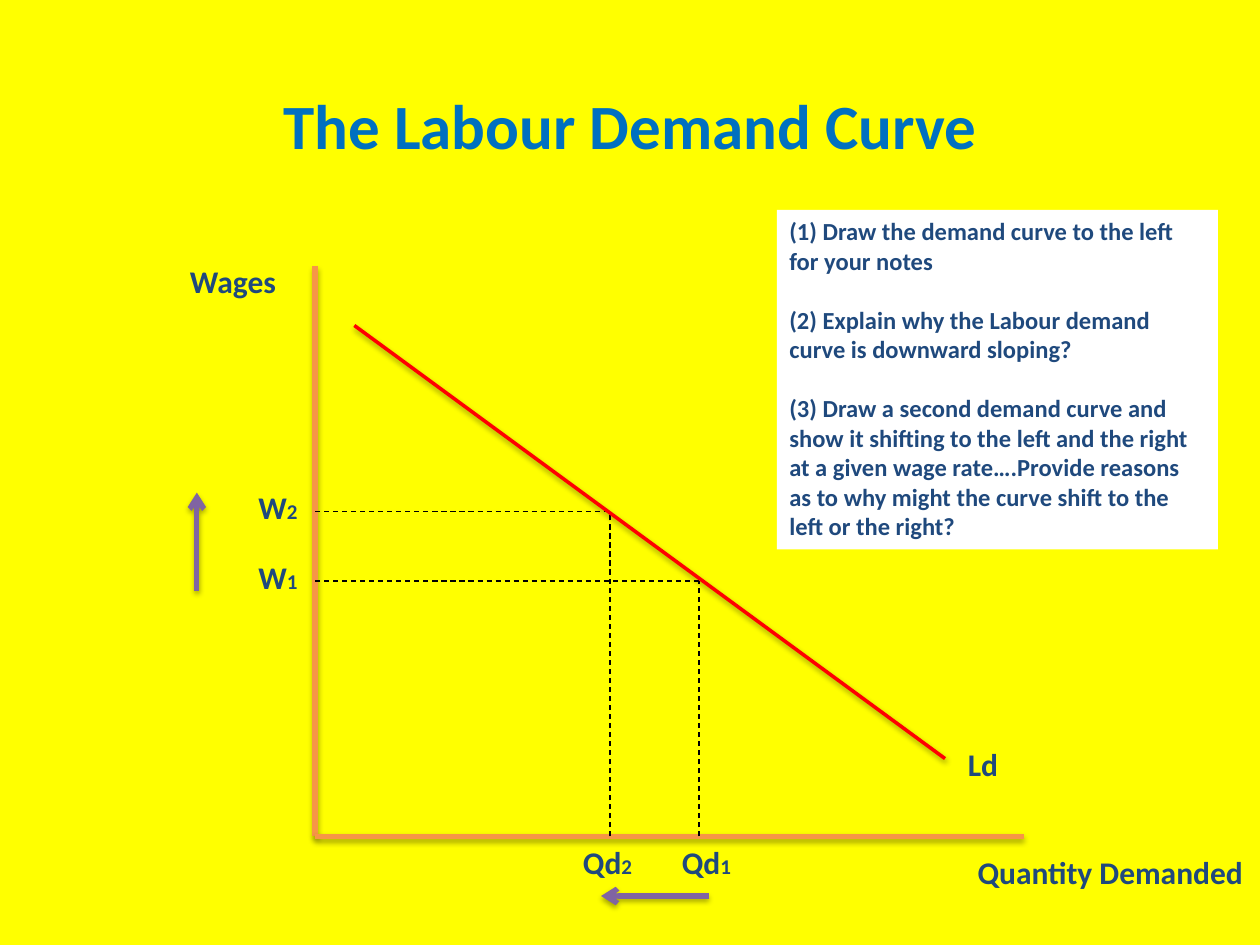
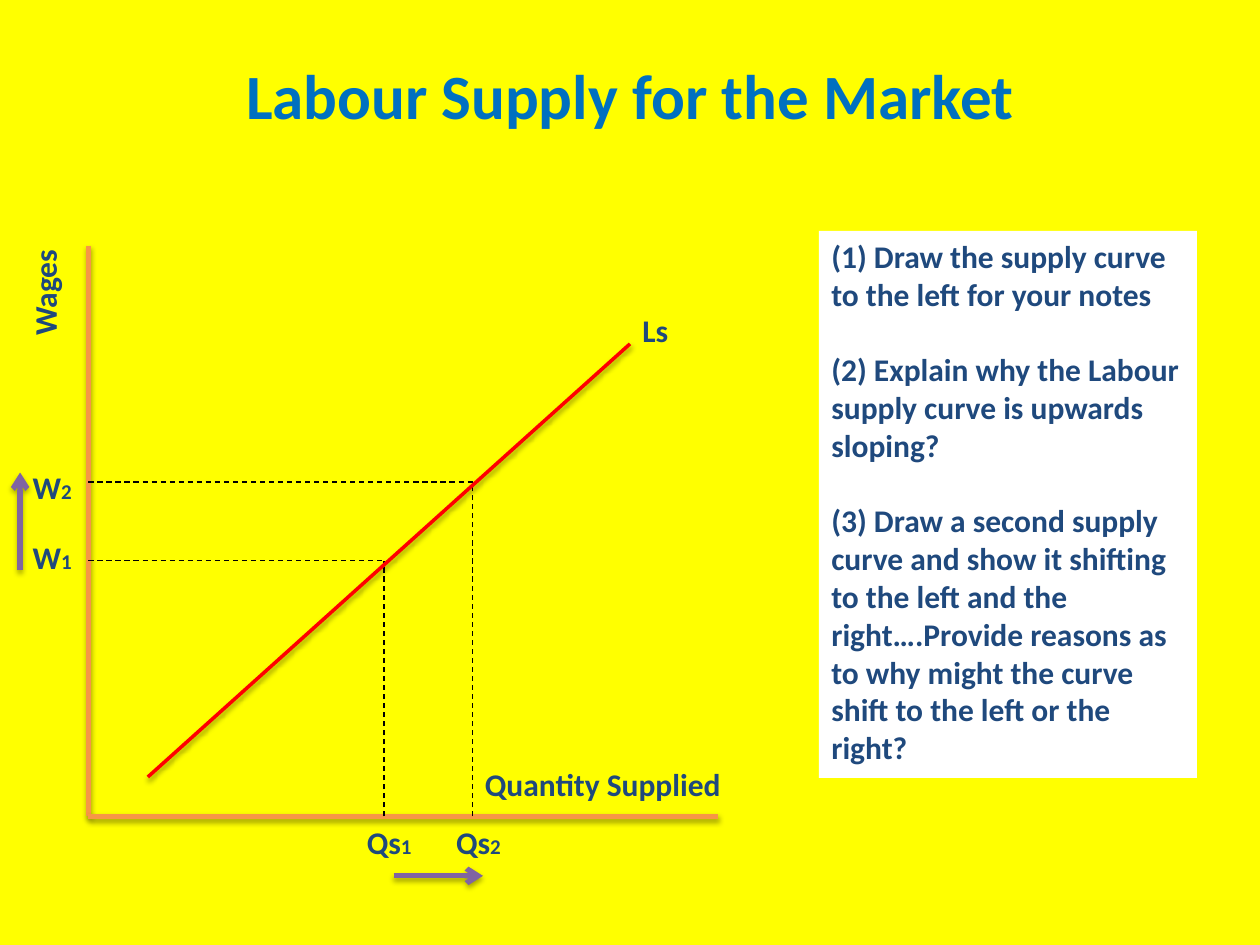
from lxml.etree import SubElement
from pptx import Presentation
from pptx.dml.color import RGBColor
from pptx.enum.dml import MSO_LINE_DASH_STYLE as Dash
from pptx.enum.shapes import MSO_CONNECTOR as Joint, MSO_SHAPE as Shape
from pptx.enum.text import MSO_ANCHOR as Anchor, PP_ALIGN as Align
from pptx.oxml.ns import qn
from pptx.util import Pt

YELLOW = RGBColor(0xFF, 0xFF, 0x00)
WHITE = RGBColor(0xFF, 0xFF, 0xFF)
BLACK = RGBColor(0x00, 0x00, 0x00)
BLUE = RGBColor(0x00, 0x70, 0xC0)
NAVY = RGBColor(0x1F, 0x49, 0x7D)
ORANGE = RGBColor(0xF7, 0x96, 0x46)
PURPLE = RGBColor(0x80, 0x64, 0xA2)
RED = RGBColor(0xFF, 0x00, 0x00)
FONT = "Calibri"


def write(frame, text, sub="", size=18, color=NAVY, align=Align.LEFT, gap=0):
    for i, line in enumerate(text.split("\n")):
        para = frame.add_paragraph() if i else frame.paragraphs[0]
        para.alignment = align
        if i:
            para.space_before = Pt(gap)
        for part, high in ((line, size), (sub, 12)):
            if part:
                run = para.add_run()
                run.text = part
                font = run.font
                font.name, font.size, font.bold = FONT, Pt(high), True
                font.color.rgb = color


class Deck:
    def __init__(self):
        self.show = Presentation()
        self.show.slide_width, self.show.slide_height = Pt(720), Pt(540)
        self.slide = None

    def start(self, title, top, height):
        self.slide = self.show.slides.add_slide(self.show.slide_layouts[6])
        back = self.slide.background.fill
        back.solid()
        back.fore_color.rgb = YELLOW
        box = self.slide.shapes.add_textbox(Pt(22.5), Pt(top), Pt(675), Pt(height))
        box.text_frame.word_wrap = True
        box.text_frame.vertical_anchor = Anchor.MIDDLE
        write(box.text_frame, title, size=36, color=BLUE, align=Align.CENTER)

    def label(self, text, x, y, width, sub="", turn=0):
        box = self.slide.shapes.add_textbox(Pt(x), Pt(y), Pt(width), Pt(29))
        box.text_frame.word_wrap = False
        box.rotation = turn
        write(box.text_frame, text, sub=sub)

    def line(self, start, end, color, width, dash=None, arrow=False, shade=0):
        ends = [Pt(v) for v in (*start, *end)]
        link = self.slide.shapes.add_connector(Joint.STRAIGHT, *ends)
        link.line.color.rgb = color
        link.line.width = Pt(width)
        if dash:
            link.line.dash_style = dash
        props = link.element.spPr
        if arrow:
            SubElement(props.find(qn("a:ln")), qn("a:tailEnd"), type="arrow")
        effects = SubElement(props, qn("a:effectLst"))
        if shade:
            shadow = SubElement(effects, qn("a:outerShdw"), blurRad=str(Pt(3.1)),
                                dist=str(Pt(1.8)), dir="5400000", rotWithShape="0")
            tint = SubElement(shadow, qn("a:srgbClr"), val=str(BLACK))
            SubElement(tint, qn("a:alpha"), val=str(shade * 1000))

    def axes(self, left, top, right, base):
        for end in ((left, top), (right, base)):
            self.line(*sorted([(left, base), end]), ORANGE, 3, shade=35)

    def guides(self, left, base, points):
        for x, y in points:
            for foot in ((left, y), (x, base)):
                self.line(foot, (x, y), BLACK, 0.75, dash=Dash.DASH)

    def marks(self, name, wage, base, spots):
        x, y = wage
        for i, spot in enumerate(spots):
            sub = str(i + 1)
            self.label("W", x, y - 40 * i, 38, sub=sub)
            self.label(name, spot, base, 43, sub=sub)

    def curve(self, start, end):
        self.line(start, end, RED, 2, shade=38)

    def arrow(self, start, end):
        self.line(start, end, PURPLE, 3, arrow=True, shade=35)

    def tasks(self, x, y, width, height, text, size, gap):
        box = self.slide.shapes.add_shape(Shape.RECTANGLE, Pt(x), Pt(y), Pt(width), Pt(height))
        box.shadow.inherit = False
        box.fill.solid()
        box.fill.fore_color.rgb = WHITE
        box.line.fill.background()
        box.text_frame.word_wrap = True
        box.text_frame.vertical_anchor = Anchor.TOP
        write(box.text_frame, text, size=size, gap=gap)


def demand(deck):
    left, base = 180, 478
    deck.start("The Labour Demand Curve", 16.5, 109.5)
    deck.axes(left, 152, 585, base)
    deck.label("Wages", 101.5, 146, 64)
    deck.label("Quantity Demanded", 551.5, 484, 168)
    deck.label("Ld", 546, 422, 32)
    deck.guides(left, base, [(399.5, 332), (348.5, 292.5)])
    deck.marks("Qd", (140.5, 315.5), base, [382.5, 326])
    deck.arrow((112.5, 337.5), (112.5, 281.5))
    deck.arrow((405, 512), (343.5, 512))
    deck.curve((202.5, 186), (540, 433.5))
    deck.tasks(444, 120, 252, 194,
               "(1) Draw the demand curve to the left for your notes\n"
               "(2) Explain why the Labour demand curve is downward sloping?\n"
               "(3) Draw a second demand curve and show it shifting to the left "
               "and the right at a given wage rate….Provide reasons as to why "
               "might the curve shift to the left or the right?", 14, 17)


def supply(deck):
    left, base = 50.5, 466.5
    deck.start("Labour Supply for the Market", 0, 108)
    deck.axes(left, 140.5, 410.5, base)
    deck.label("Wages", -6.5, 152.5, 64, turn=270)
    deck.label("Quantity Supplied", 270, 433.5, 150.5)
    deck.label("Ls", 360, 174, 29.5)
    deck.guides(left, base, [(219.5, 320.5), (270, 275.5)])
    deck.curve((84.5, 444), (360, 196.5))
    deck.marks("Qs", (11.5, 304), base, [202.5, 253.5])
    deck.arrow((11.5, 326), (11.5, 270))
    deck.arrow((225, 500.5), (276, 500.5))
    deck.tasks(468, 132, 216, 312.5,
               "(1) Draw the supply curve to the left for your notes\n"
               "(2) Explain why the Labour supply curve is upwards sloping?\n"
               "(3) Draw a second supply curve and show it shifting to the left "
               "and the right….Provide reasons as to why might the curve shift "
               "to the left or the right?", 18, 21.5)


def main():
    deck = Deck()
    demand(deck)
    supply(deck)
    deck.show.save("out.pptx")


if __name__ == "__main__":
    main()
